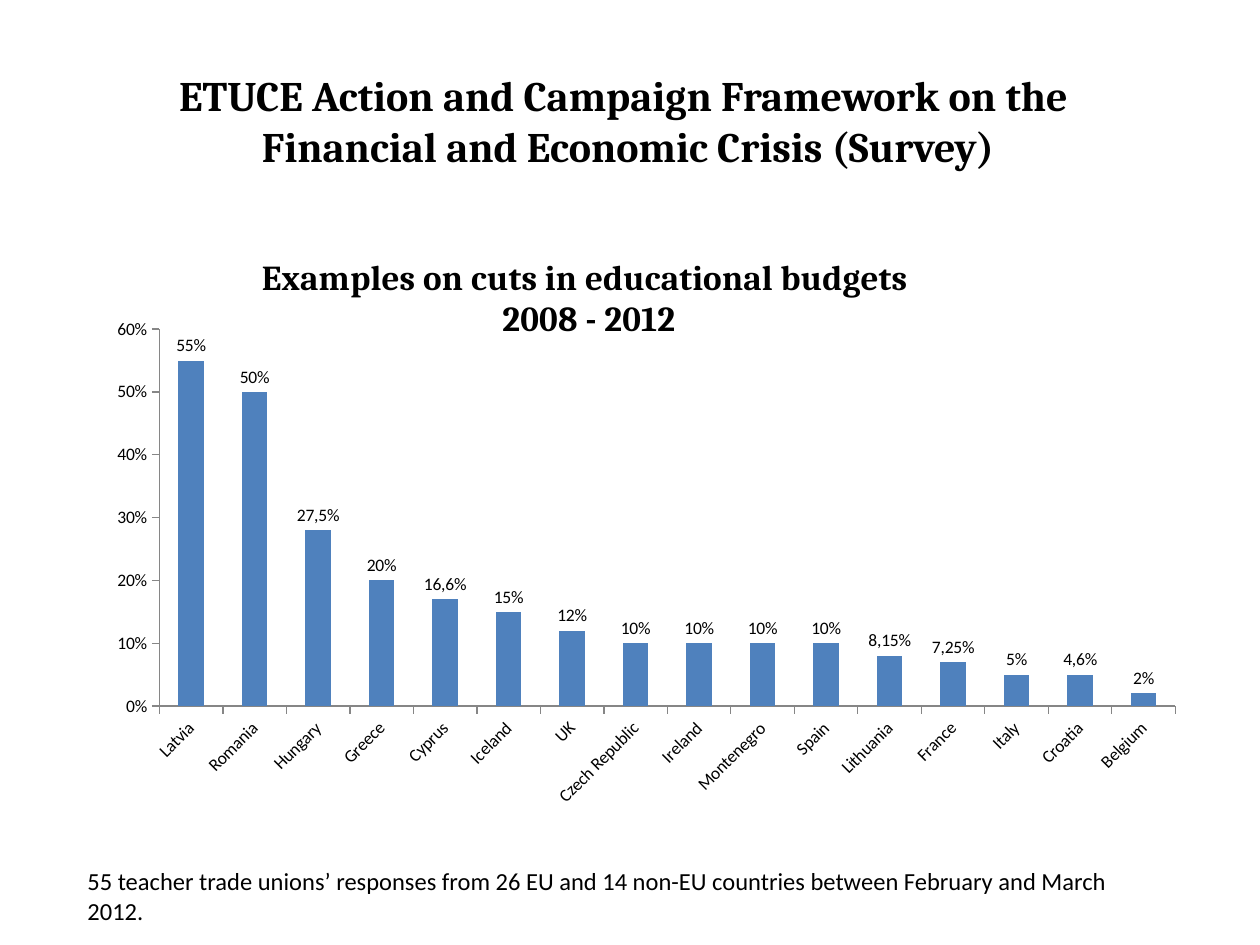
from lxml import etree
from pptx import Presentation
from pptx.chart.data import CategoryChartData
from pptx.dml.color import RGBColor
from pptx.enum.chart import XL_CHART_TYPE, XL_LABEL_POSITION, XL_TICK_MARK
from pptx.enum.text import MSO_ANCHOR, PP_ALIGN
from pptx.oxml.ns import qn
from pptx.util import Pt

COLUMNS = XL_CHART_TYPE.COLUMN_CLUSTERED
OUTSIDE_END = XL_LABEL_POSITION.OUTSIDE_END
TICK_OUT = XL_TICK_MARK.OUTSIDE
MIDDLE, TOP = MSO_ANCHOR.MIDDLE, MSO_ANCHOR.TOP
CENTER, LEFT = PP_ALIGN.CENTER, PP_ALIGN.LEFT
PX = 914400 // 126

TITLE_FONT = {"name": "Cambria", "size": Pt(24), "bold": True}
CHART_TITLE_FONT = {"name": "Cambria", "size": Pt(20), "bold": True}
NOTE_FONT = {"name": "Calibri", "size": Pt(14), "bold": False}
CHART_FONT = {"name": "Calibri", "size": Pt(10), "bold": False}


def style(font, values, color="000000"):
    for name, value in values.items():
        setattr(font, name, value)
    font.color.rgb = RGBColor.from_string(color)


def set_layout(parent, index, values):
    for old in parent.findall(qn("c:layout")):
        parent.remove(old)
    layout = etree.Element(qn("c:layout"))
    manual = etree.SubElement(layout, qn("c:manualLayout"))
    for tag, value in values.items():
        etree.SubElement(manual, qn("c:" + tag)).set("val", str(value))
    parent.insert(index, layout)


presentation = Presentation()
presentation.slide_width, presentation.slide_height = 1260 * PX, 945 * PX
slide = presentation.slides.add_slide(presentation.slide_layouts[6])

# Slide title and survey note
texts = [
    ((61, 65, 1134, 110), MIDDLE, CENTER, TITLE_FONT,
     "ETUCE Action and Campaign Framework on the \vFinancial and Economic Crisis (Survey)"),
    ((75, 860, 1106, 72), TOP, LEFT, NOTE_FONT,
     "55 teacher trade unions’ responses from 26 EU and 14 non-EU countries "
     "between February and March 2012."),
]
for box, anchor, alignment, font, text in texts:
    shape = slide.shapes.add_textbox(*[length * PX for length in box])
    frame = shape.text_frame
    frame.word_wrap = True
    frame.vertical_anchor = anchor
    paragraph = frame.paragraphs[0]
    paragraph.text = text
    paragraph.alignment = alignment
    for run in paragraph.runs:
        style(run.font, font)

# Budget cuts by country
cuts = {
    "Latvia": 0.55, "Romania": 0.5, "Hungary": 0.28, "Greece": 0.2,
    "Cyprus": 0.17, "Iceland": 0.15, "UK": 0.12, "Czech Republic": 0.1,
    "Ireland": 0.1, "Montenegro": 0.1, "Spain": 0.1, "Lithuania": 0.08,
    "France": 0.07, "Italy": 0.05, "Croatia": 0.05, "Belgium": 0.02,
}
decimal_labels = {"Hungary": "27,5%", "Cyprus": "16,6%", "Lithuania": "8,15%",
                  "France": "7,25%", "Croatia": "4,6%"}
data = CategoryChartData(number_format="0%")
data.categories = list(cuts)
data.add_series("Series 1", list(cuts.values()))
chart_box = [length * PX for length in (63, 184, 1134, 745)]
chart = slide.shapes.add_chart(COLUMNS, *chart_box, data).chart
style(chart.font, CHART_FONT)
chart.has_legend = False

# Chart title
title_frame = chart.chart_title.text_frame
title_frame.text = "Examples on cuts in educational budgets \n2008 - 2012"
for paragraph in title_frame.paragraphs:
    paragraph.alignment = CENTER
    for run in paragraph.runs:
        style(run.font, CHART_TITLE_FONT)
set_layout(chart.chart_title._element, 1,
           {"xMode": "edge", "yMode": "edge", "x": 0.172, "y": 0.092})

# Axes
for axis in (chart.category_axis, chart.value_axis):
    axis.has_major_gridlines = False
    axis.major_tick_mark = TICK_OUT
    axis.format.line.color.rgb = RGBColor.from_string("868686")
    style(axis.tick_labels.font, CHART_FONT)
chart.category_axis._element.txPr.bodyPr.set("rot", "-2700000")
value_format = {"minimum_scale": 0, "maximum_scale": 0.6, "major_unit": 0.1}
for name, value in value_format.items():
    setattr(chart.value_axis, name, value)
chart.value_axis.tick_labels.number_format = "0%"
chart.value_axis.tick_labels.number_format_is_linked = False

# Columns and their labels
plot = chart.plots[0]
plot.gap_width = 150
plot.vary_by_categories = False
series = plot.series[0]
series.format.fill.solid()
series.format.fill.fore_color.rgb = RGBColor.from_string("4F81BD")
labels = series.data_labels
label_format = {"show_value": True, "number_format": "0%",
                "number_format_is_linked": False, "position": OUTSIDE_END}
for name, value in label_format.items():
    setattr(labels, name, value)
style(labels.font, CHART_FONT)
for index, country in enumerate(cuts):
    if country in decimal_labels:
        label = series.points[index].data_label
        label.text_frame.text = decimal_labels[country]
        label.position = OUTSIDE_END
        style(label.text_frame.paragraphs[0].runs[0].font, CHART_FONT)

# Plot area
plot_area = chart._chartSpace.chart.plotArea
set_layout(plot_area, 0,
           {"layoutTarget": "inner", "xMode": "edge", "yMode": "edge",
            "x": 0.085, "y": 0.195, "w": 0.896, "h": 0.506})

presentation.save("out.pptx")
